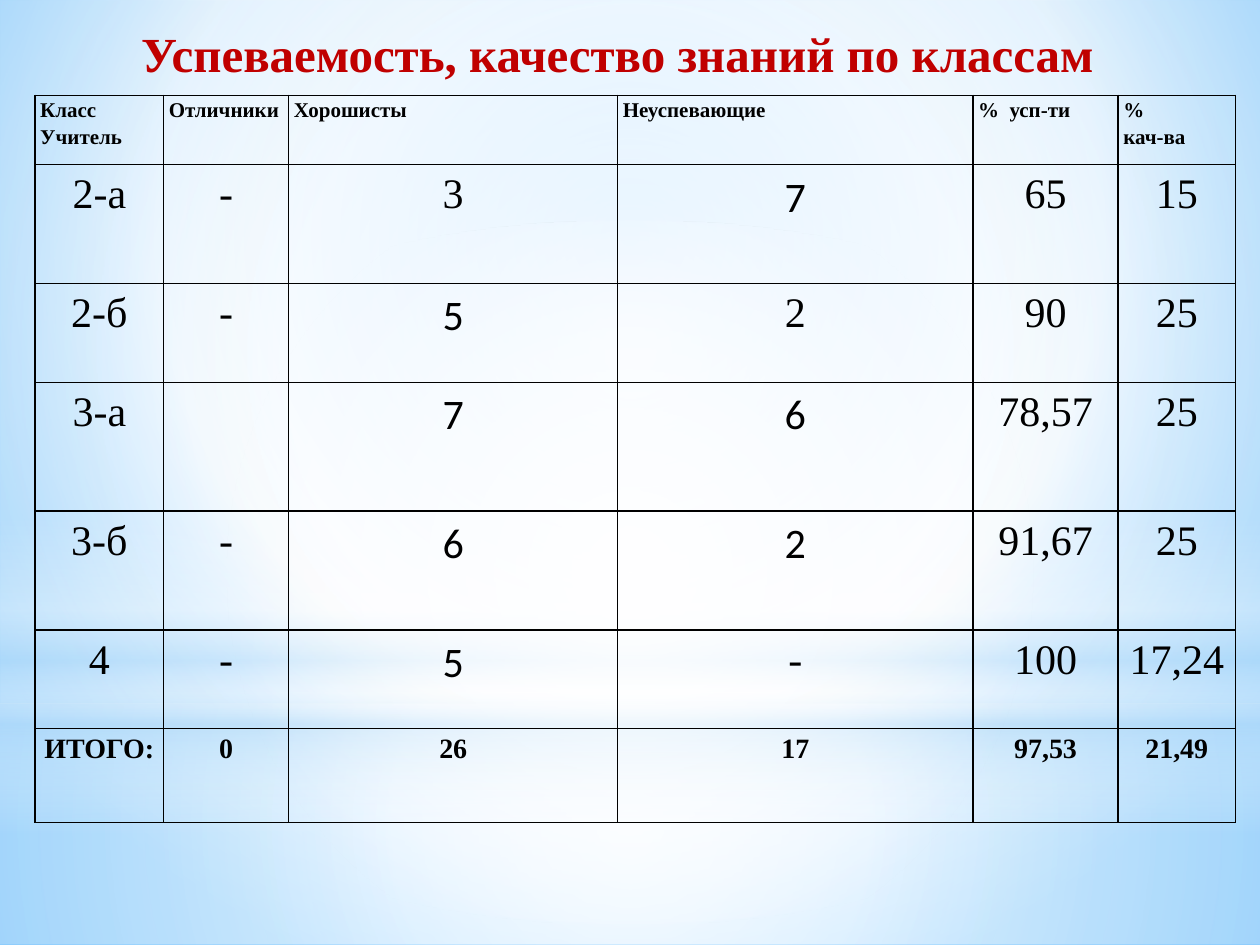
from dataclasses import dataclass
from typing import Any, NamedTuple

from lxml.etree import SubElement
from pptx import Presentation
from pptx.dml.color import RGBColor
from pptx.enum.shapes import MSO_SHAPE
from pptx.enum.text import MSO_ANCHOR, MSO_AUTO_SIZE, PP_ALIGN
from pptx.oxml.ns import qn
from pptx.util import Pt

WHITE = RGBColor(0xFF, 0xFF, 0xFF)
BLACK = RGBColor(0x00, 0x00, 0x00)
TITLE_RED = RGBColor(0xC0, 0x00, 0x00)
PALE_BLUE = RGBColor(0xB4, 0xDC, 0xFA)
SKY_BLUE = RGBColor(0x9E, 0xD5, 0xFF)
DEEP_BLUE = RGBColor(0x5B, 0xB9, 0xFF)

SERIF = "Times New Roman"
SANS = "Calibri"


class Stop(NamedTuple):
    position: int
    color: RGBColor
    opacity: int = 100


@dataclass
class Gradient:
    stops: list[Stop]
    focus: tuple[int, int, int, int] = (50, 50, 50, 50)  # left, top, right, bottom
    angle: int | None = None  # None makes the gradient circular


@dataclass
class Glow:
    preset: MSO_SHAPE
    top: float
    height: float
    gradient: Gradient


@dataclass
class TableRow:
    height: float
    texts: list[str]
    size: int
    bold: bool
    align: PP_ALIGN = PP_ALIGN.CENTER
    sans_columns: tuple[int, ...] = ()


BACKDROP = Gradient(
    [Stop(0, SKY_BLUE), Stop(60, WHITE), Stop(100, DEEP_BLUE)], focus=(20, 10, 20, 60))

GLOWS = [
    Glow(MSO_SHAPE.RECTANGLE, 402, 138, Gradient(
        [Stop(0, WHITE, 91), Stop(37, WHITE, 76), Stop(100, PALE_BLUE, 79)])),
    Glow(MSO_SHAPE.RECTANGLE, 0, 402, Gradient(
        [Stop(0, WHITE, 89), Stop(48, WHITE, 62), Stop(100, PALE_BLUE, 79)])),
    Glow(MSO_SHAPE.RECTANGLE, 296.5, 180, Gradient(
        [Stop(0, WHITE, 0), Stop(29, WHITE, 30), Stop(45, PALE_BLUE, 40),
         Stop(55, WHITE, 26), Stop(65, PALE_BLUE, 60), Stop(100, WHITE, 0)], angle=90)),
    Glow(MSO_SHAPE.OVAL, 126, 402, Gradient([Stop(0, WHITE), Stop(56, WHITE, 0)])),
]

COLUMN_WIDTHS = [73.5, 71.5, 188, 203, 83, 67]
ROWS = [
    TableRow(39.5, ["Класс\nУчитель", "Отличники", "Хорошисты", "Неуспевающие",
                    "%  усп-ти", "%\nкач-ва"], 12, True, PP_ALIGN.LEFT),
    TableRow(68, ["2-а", "-", "3", "7", "65", "15"], 24, False, sans_columns=(3,)),
    TableRow(56.5, ["2-б", "-", "5", "2", "90", "25"], 24, False, sans_columns=(2,)),
    TableRow(73.5, ["3-а", "", "7", "6", "78,57", "25"], 24, False, sans_columns=(2, 3)),
    TableRow(68, ["3-б", "-", "6", "2", "91,67", "25"], 24, False, sans_columns=(2, 3)),
    TableRow(56.5, ["4", "-", "5", "-", "100", "17,24"], 24, False, sans_columns=(2,)),
    TableRow(53.5, ["ИТОГО:", "0", "26", "17", "97,53", "21,49"], 16, True),
]
CELL_FORMAT = {"margin_left": Pt(3), "margin_right": Pt(3),
               "margin_top": Pt(0), "margin_bottom": Pt(0)}
TABLE_FORMAT = {"first_row": False, "horz_banding": False}


def apply_format(target: Any, values: dict[str, Any]) -> None:
    for name, value in values.items():
        setattr(target, name, value)


def apply_gradient(fill: Any, owner: Any, gradient: Gradient) -> None:
    fill.gradient()
    grad = owner.find(".//" + qn("a:gradFill"))
    for child in list(grad):
        grad.remove(child)
    stop_list = SubElement(grad, qn("a:gsLst"))
    for stop in gradient.stops:
        gs = SubElement(stop_list, qn("a:gs"), pos=str(stop.position * 1000))
        color = SubElement(gs, qn("a:srgbClr"), val=str(stop.color))
        if stop.opacity < 100:
            SubElement(color, qn("a:alpha"), val=str(stop.opacity * 1000))
    if gradient.angle is not None:
        SubElement(grad, qn("a:lin"), ang=str(gradient.angle * 60000), scaled="0")
        return
    path_node = SubElement(grad, qn("a:path"), path="circle")
    sides = {side: str(share * 1000) for side, share in zip("ltrb", gradient.focus)}
    SubElement(path_node, qn("a:fillToRect"), **sides)


def draw_glow(slide: Any, glow: Glow) -> None:
    shape = slide.shapes.add_shape(
        glow.preset, Pt(0), Pt(glow.top), Pt(720), Pt(glow.height))
    shape.shadow.inherit = False
    shape.line.fill.background()
    apply_gradient(shape.fill, shape._element, glow.gradient)


def format_font(font: Any, name: str, size: int, bold: bool, color: RGBColor) -> None:
    apply_format(font, {"name": name, "size": Pt(size), "bold": bold})
    font.color.rgb = color


def draw_title(slide: Any, text: str) -> None:
    title = slide.shapes.add_textbox(Pt(70.5), Pt(9.5), Pt(564.5), Pt(41))
    apply_format(title.text_frame, {
        "word_wrap": False, "auto_size": MSO_AUTO_SIZE.SHAPE_TO_FIT_TEXT,
        "vertical_anchor": MSO_ANCHOR.MIDDLE})
    paragraph = title.text_frame.paragraphs[0]
    paragraph.alignment = PP_ALIGN.CENTER
    run = paragraph.add_run()
    run.text = text
    format_font(run.font, SERIF, 28, True, TITLE_RED)


def draw_borders(cell: Any) -> None:
    properties = cell._tc.get_or_add_tcPr()
    for side in ("a:lnL", "a:lnR", "a:lnT", "a:lnB"):
        line = SubElement(properties, qn(side), w=str(Pt(1)))
        solid = SubElement(line, qn("a:solidFill"))
        SubElement(solid, qn("a:srgbClr"), val=str(BLACK))


def fill_cell(cell: Any, text: str, row: TableRow, font_name: str) -> None:
    apply_format(cell, CELL_FORMAT)
    draw_borders(cell)
    cell.fill.background()
    if not text:
        return
    cell.text = text
    for paragraph in cell.text_frame.paragraphs:
        apply_format(paragraph, {"alignment": row.align, "line_spacing": 1.15})
        for run in paragraph.runs:
            format_font(run.font, font_name, row.size, row.bold, BLACK)


def draw_table(slide: Any) -> None:
    frame = slide.shapes.add_table(
        len(ROWS), len(COLUMN_WIDTHS), Pt(20), Pt(54.5),
        Pt(sum(COLUMN_WIDTHS)), Pt(sum(row.height for row in ROWS)))
    grades = frame.table
    apply_format(grades, TABLE_FORMAT)
    for column, width in zip(grades.columns, COLUMN_WIDTHS):
        column.width = Pt(width)
    for r, row in enumerate(ROWS):
        grades.rows[r].height = Pt(row.height)
        for c, text in enumerate(row.texts):
            font_name = SANS if c in row.sans_columns else SERIF
            fill_cell(grades.cell(r, c), text, row, font_name)


def main() -> None:
    deck = Presentation()
    apply_format(deck, {"slide_width": Pt(720), "slide_height": Pt(540)})
    slide = deck.slides.add_slide(deck.slide_layouts[6])

    # Backdrop with soft glows
    apply_gradient(slide.background.fill, slide._element, BACKDROP)
    for glow in GLOWS:
        draw_glow(slide, glow)

    # Title and grades by class
    draw_title(slide, "Успеваемость, качество знаний по классам")
    draw_table(slide)

    deck.save("out.pptx")


if __name__ == "__main__":
    main()
